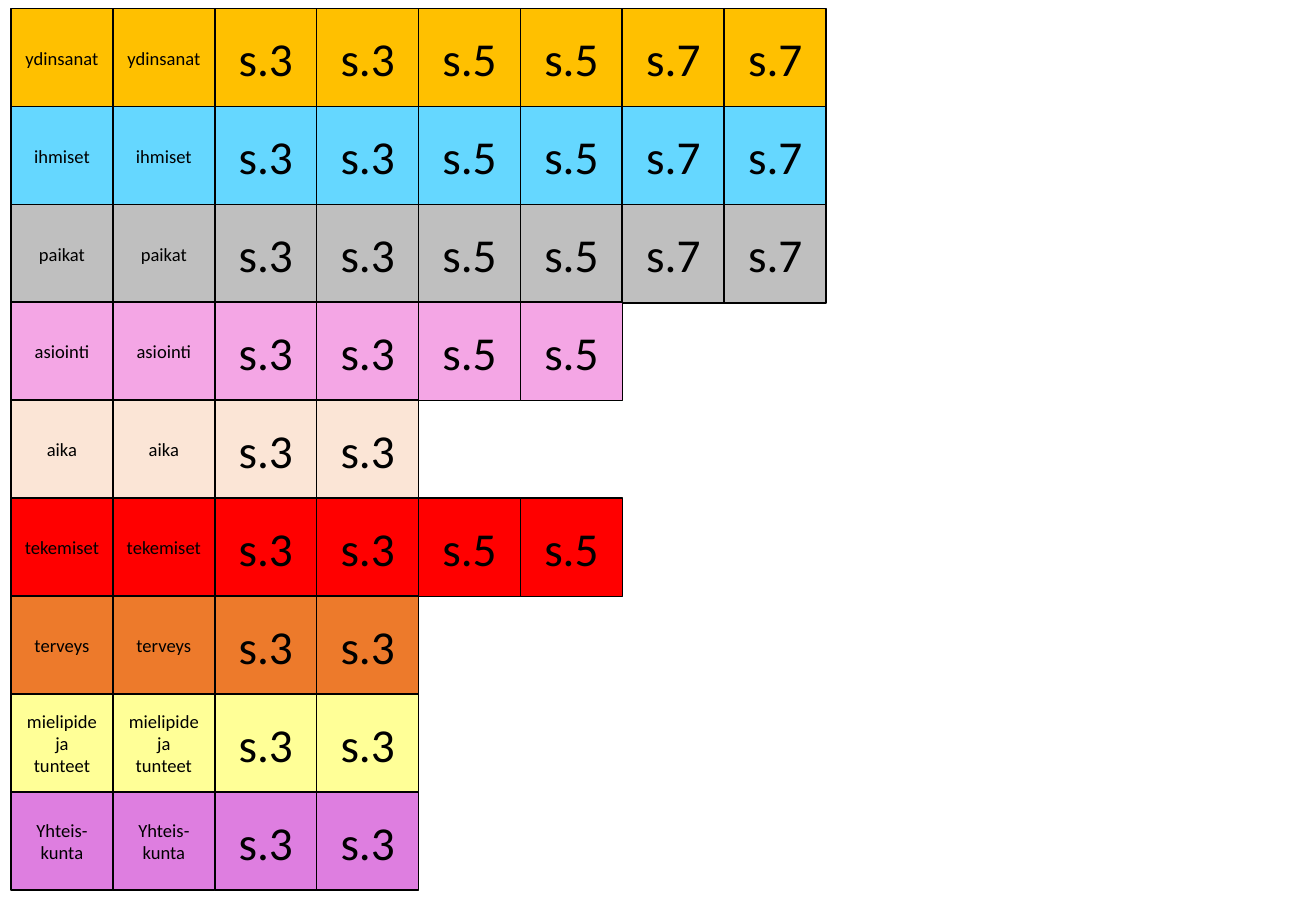
"""Build a slide of coloured category labels with their page-number tiles."""
from pptx import Presentation
from pptx.dml.color import RGBColor
from pptx.enum.shapes import MSO_SHAPE
from pptx.enum.text import MSO_ANCHOR, PP_ALIGN
from pptx.util import Inches, Pt

RECTANGLE = MSO_SHAPE.RECTANGLE
MIDDLE = MSO_ANCHOR.MIDDLE
CENTER = PP_ALIGN.CENTER

COLORS = {
    "black": "000000",
    "amber": "FFC000",
    "sky": "65D7FF",
    "grey": "BFBFBF",
    "pink": "F4A6E5",
    "peach": "FBE5D6",
    "red": "FF0000",
    "orange": "ED7A2B",
    "yellow": "FFFF97",
    "violet": "DE7EE0",
}
CATEGORIES = [
    ("ydinsanat", "amber", ["s.3", "s.5", "s.7"]),
    ("ihmiset", "sky", ["s.3", "s.5", "s.7"]),
    ("paikat", "grey", ["s.3", "s.5", "s.7"]),
    ("asiointi", "pink", ["s.3", "s.5"]),
    ("aika", "peach", ["s.3"]),
    ("tekemiset", "red", ["s.3", "s.5"]),
    ("terveys", "orange", ["s.3"]),
    ("mielipide ja\ntunteet", "yellow", ["s.3"]),
    ("Yhteis-kunta", "violet", ["s.3"]),
]
COPIES = 2
LABEL_SIZE, PAGE_SIZE = 11, 28
TILE_WIDTH, TILE_HEIGHT = 0.84, 0.81
FIRST_LEFT, LAST_LEFT = 0.09, 5.96
FIRST_TOP, LAST_TOP = 0.07, 6.52
COLUMN_STEP = (LAST_LEFT - FIRST_LEFT) / 7
ROW_STEP = (LAST_TOP - FIRST_TOP) / (len(CATEGORIES) - 1)


def rgb(name):
    return RGBColor.from_string(COLORS[name])


def add_tile(slide, row, column, text, color, size):
    tile = slide.shapes.add_shape(
        RECTANGLE,
        Inches(FIRST_LEFT + column * COLUMN_STEP),
        Inches(FIRST_TOP + row * ROW_STEP),
        Inches(TILE_WIDTH),
        Inches(TILE_HEIGHT),
    )
    tile.shadow.inherit = False
    tile.fill.solid()
    tile.fill.fore_color.rgb = rgb(color)
    tile.line.color.rgb = rgb("black")
    tile.line.width = Pt(1)
    frame = tile.text_frame
    frame.word_wrap = True
    frame.vertical_anchor = MIDDLE
    frame.text = text
    for paragraph in frame.paragraphs:
        paragraph.alignment = CENTER
        for span in paragraph.runs:
            span.font.name = "Calibri"
            span.font.size = Pt(size)
            span.font.color.rgb = rgb("black")


def main():
    deck = Presentation()
    deck.slide_width, deck.slide_height = Inches(10.83), Inches(7.5)
    slide = deck.slides.add_slide(deck.slide_layouts[6])
    for row, (label, color, pages) in enumerate(CATEGORIES):
        for index, text in enumerate([label] + pages):
            size = PAGE_SIZE if index else LABEL_SIZE
            for copy_index in range(COPIES):
                column = index * COPIES + copy_index
                add_tile(slide, row, column, text, color, size)
    deck.save("out.pptx")


if __name__ == "__main__":
    main()
